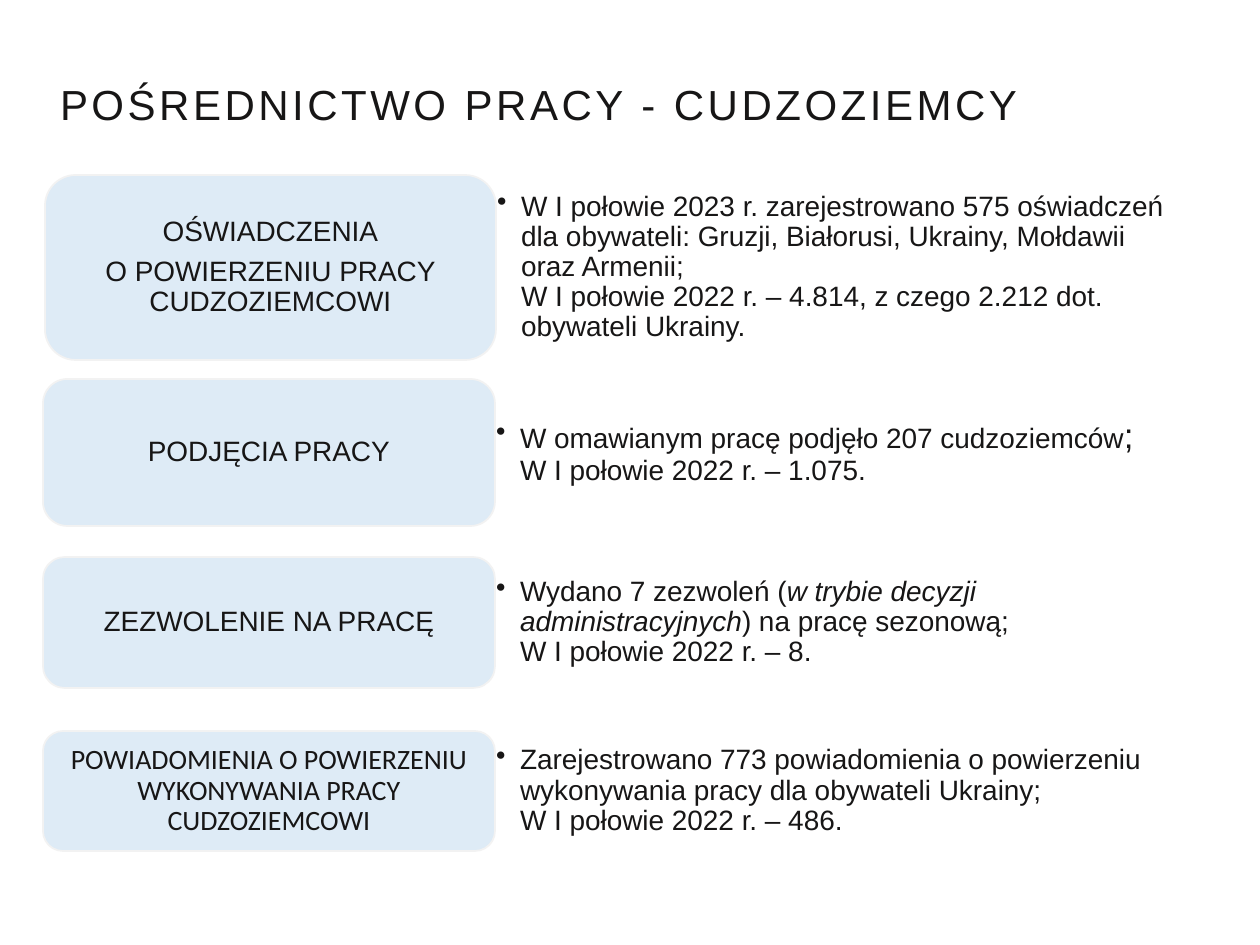
"""Builds a slide on job placement of foreigners: four labelled boxes with details."""
from lxml.etree import SubElement
from pptx import Presentation
from pptx.dml.color import RGBColor
from pptx.enum.shapes import MSO_SHAPE as Shape
from pptx.enum.text import MSO_ANCHOR as Anchor, MSO_AUTO_SIZE as AutoSize, PP_ALIGN as Align
from pptx.oxml.ns import qn
from pptx.util import Emu, Pt

TITLE = "POŚREDNICTWO PRACY - CUDZOZIEMCY"
COLORS = {"text": "171616", "box": "DEEBF6", "outline": "F2F2F2"}
ROWS = [
    {"box": (45, 175, 451, 185), "font": "Arial",
     "label": ["OŚWIADCZENIA", "O POWIERZENIU PRACY CUDZOZIEMCOWI"],
     "detail": [[("W I połowie 2023 r. zarejestrowano 575 oświadczeń dla obywateli: "
                  "Gruzji, Białorusi, Ukrainy, Mołdawii oraz Armenii;", {})],
                [("W I połowie 2022 r. – 4.814, z czego 2.212 dot. obywateli Ukrainy.", {})]]},
    {"box": (43, 379, 452, 147), "font": "Arial",
     "label": ["PODJĘCIA PRACY"],
     "detail": [[("W omawianym pracę podjęło 207 cudzoziemców", {}), (";", {"size": Pt(20)})],
                [("W I połowie 2022 r. – 1.075.", {})]]},
    {"box": (43, 557, 452, 131), "font": "Arial",
     "label": ["ZEZWOLENIE NA PRACĘ"],
     "detail": [[("Wydano 7 zezwoleń (", {}),
                 ("w trybie decyzji administracyjnych", {"italic": True}),
                 (") na pracę sezonową;", {})],
                [("W I połowie 2022 r. – 8.", {})]]},
    {"box": (43, 731, 452, 120), "font": "Calibri",
     "label": ["POWIADOMIENIA O POWIERZENIU WYKONYWANIA PRACY CUDZOZIEMCOWI"],
     "detail": [[("Zarejestrowano 773 powiadomienia o powierzeniu wykonywania pracy "
                  "dla obywateli Ukrainy;", {})],
                [("W I połowie 2022 r. – 486.", {})]]},
]
DETAIL_WIDTH, DETAIL_HEIGHT, INDENT = 673, 116, 24


def px(count):
    return Emu(round(count * 914400 / 126))


def color(name):
    return RGBColor.from_string(COLORS[name])


def set_frame(frame, side, top):
    frame.word_wrap = True
    frame.auto_size = AutoSize.NONE
    frame.vertical_anchor = Anchor.MIDDLE
    frame.margin_left = frame.margin_right = px(side)
    frame.margin_top = frame.margin_bottom = px(top)


def style(paragraph, size, font="Arial", align=Align.LEFT):
    paragraph.alignment = align
    paragraph.line_spacing = 0.9
    paragraph.font.size = Pt(size)
    paragraph.font.name = font
    paragraph.font.color.rgb = color("text")


def add_title(slide):
    title = slide.shapes.title
    title.left, title.top, title.width, title.height = map(px, (35, 37, 1191, 139))
    set_frame(title.text_frame, 25, 25)
    heading = title.text_frame.paragraphs[0]
    run = heading.add_run()
    run.text = TITLE
    run.font._element.set("spc", "200")
    style(heading, 24)


def add_label(slide, row):
    box = slide.shapes.add_shape(Shape.ROUNDED_RECTANGLE, *map(px, row["box"]))
    box.shadow.inherit = False
    box.fill.solid()
    box.fill.fore_color.rgb = color("box")
    box.line.color.rgb = color("outline")
    box.line.width = Pt(1)
    frame = box.text_frame
    set_frame(frame, 17, 10)
    frame.text = "\n".join(row["label"])
    for paragraph in frame.paragraphs:
        style(paragraph, 16, row["font"], Align.CENTER)
        paragraph.space_after = Pt(5.6)


def add_detail(slide, row):
    left, top, width, height = row["box"]
    place = (left + width, top + (height - DETAIL_HEIGHT) / 2, DETAIL_WIDTH, DETAIL_HEIGHT)
    frame = slide.shapes.add_textbox(*map(px, place)).text_frame
    set_frame(frame, 1, 1)
    item = frame.paragraphs[0]
    style(item, 16)
    props = item._p.get_or_add_pPr()
    props.set("marL", str(px(INDENT)))
    props.set("indent", str(px(-INDENT)))
    bullet = SubElement(props, qn("a:buChar"), char="•")
    props.find(qn("a:defRPr")).addprevious(bullet)
    for number, line in enumerate(row["detail"]):
        if number:
            item.add_line_break()
        for text, look in line:
            run = item.add_run()
            run.text = text
            for name, value in look.items():
                setattr(run.font, name, value)


def main():
    deck = Presentation()
    deck.slide_width, deck.slide_height = px(1260), px(945)
    slide = deck.slides.add_slide(deck.slide_layouts[5])
    add_title(slide)
    for row in ROWS:
        add_label(slide, row)
        add_detail(slide, row)
    deck.save("out.pptx")


if __name__ == "__main__":
    main()
